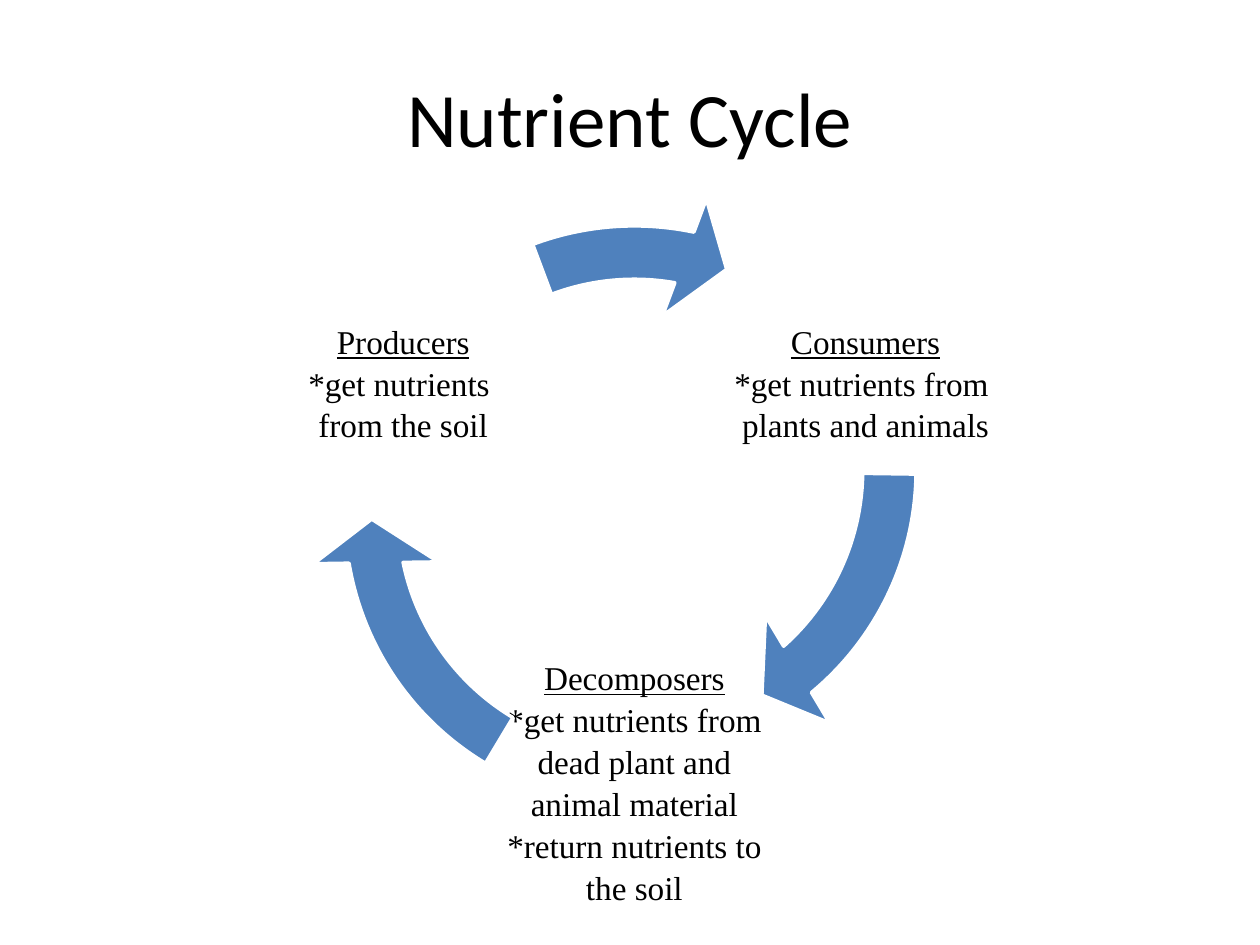
from collections import namedtuple

from pptx import Presentation
from pptx.dml.color import RGBColor
from pptx.enum.shapes import MSO_SHAPE
from pptx.enum.text import MSO_ANCHOR, PP_ALIGN
from pptx.util import Inches, Pt

Box = namedtuple("Box", "left top width height")

TITLE_BOX = Box(0.5, 0.3, 9, 1.25)
CYCLE_BOX = Box(2.11, 1.94, 5.85, 5.35)
STAGE_SIZE = 2.18
RING_SIZE = 5.16
RING_RISE = 0.43

STAGES = [
    (1, 0, ["Consumers", "*get nutrients from ", "plants and animals"]),
    (0.5, 1, ["Decomposers",
              "*get nutrients from dead plant and animal material",
              "*return nutrients to the soil"]),
    (0, 0, ["Producers", "*get nutrients ", "from the soil"]),
]
ARROWS = [
    (-0.06, -0.36, 0.5, 29.66),
    (0, 0, 72.58, 101.74),
    (0, 0, 149.66, 168.59),
]


def color(value):
    return RGBColor.from_string(value)


def place(shape, box):
    shape.left, shape.top, shape.width, shape.height = map(Inches, box)


def format_paragraph(paragraph, font_name, size, underline=False):
    paragraph.alignment = PP_ALIGN.CENTER
    for run in paragraph.runs:
        run.font.name = font_name
        run.font.size = Pt(size)
        run.font.underline = underline
        run.font.color.rgb = color("000000")


def add_title(slide, box, text):
    title = slide.shapes.title
    place(title, box)
    title.text_frame.text = text
    title.text_frame.vertical_anchor = MSO_ANCHOR.MIDDLE
    format_paragraph(title.text_frame.paragraphs[0], "Calibri", 44)


def add_stage(slide, box, lines):
    stage = slide.shapes.add_textbox(*map(Inches, box))
    text_frame = stage.text_frame
    text_frame.word_wrap = True
    text_frame.vertical_anchor = MSO_ANCHOR.MIDDLE
    text_frame.margin_left = text_frame.margin_right = Inches(0.03)
    text_frame.margin_top = text_frame.margin_bottom = Inches(0.03)
    text_frame.text = "\n".join(lines)
    for index, paragraph in enumerate(text_frame.paragraphs):
        format_paragraph(paragraph, "Times New Roman", 19, underline=index == 0)
        paragraph.line_spacing = 1.05


def add_arrow(slide, box, start, end):
    arrow = slide.shapes.add_shape(MSO_SHAPE.CIRCULAR_ARROW, *map(Inches, box))
    arrow.shadow.inherit = False
    arrow.fill.solid()
    arrow.fill.fore_color.rgb = color("4F81BD")
    arrow.line.color.rgb = color("FFFFFF")
    arrow.line.width = Pt(2)
    for index, value in enumerate([0.082, 5.76, end, start, 0.096]):
        arrow.adjustments[index] = value


def add_cycle(slide, box):
    ring_left = box.left + (box.width - RING_SIZE) / 2
    ring_top = box.top - RING_RISE
    for stage, arrow in zip(STAGES, ARROWS):
        column, row, lines = stage
        stage_box = Box(box.left + column * (box.width - STAGE_SIZE),
                        box.top + row * (box.height - STAGE_SIZE),
                        STAGE_SIZE, STAGE_SIZE)
        add_stage(slide, stage_box, lines)
        shift_x, shift_y, start, end = arrow
        ring_box = Box(ring_left + shift_x, ring_top + shift_y, RING_SIZE, RING_SIZE)
        add_arrow(slide, ring_box, start, end)


def main():
    presentation = Presentation()
    presentation.slide_width = Inches(10)
    presentation.slide_height = Inches(7.5)
    slide = presentation.slides.add_slide(presentation.slide_layouts[5])
    add_title(slide, TITLE_BOX, "Nutrient Cycle")
    add_cycle(slide, CYCLE_BOX)
    presentation.save("out.pptx")


if __name__ == "__main__":
    main()
